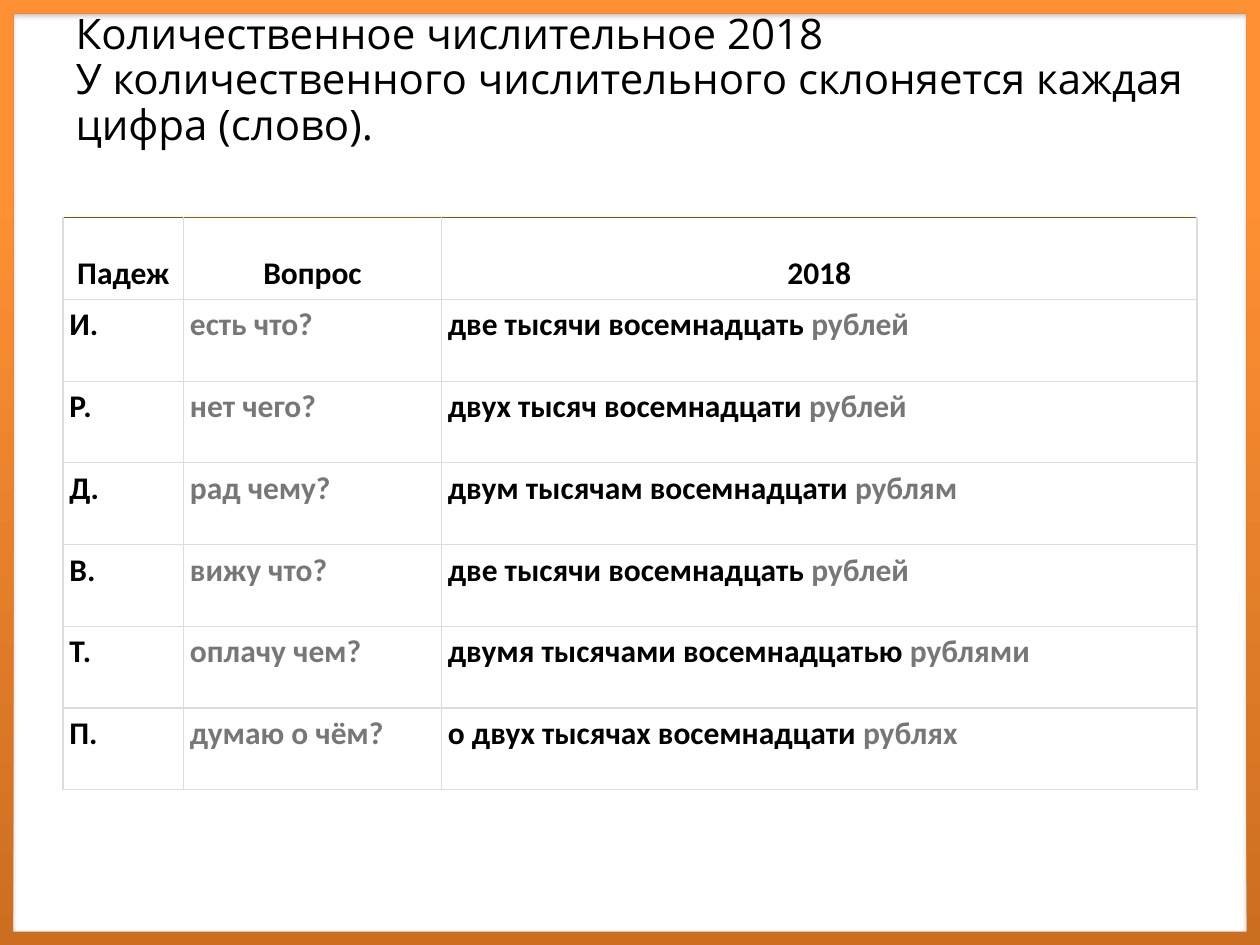
from dataclasses import dataclass

from pptx import Presentation
from pptx.dml.color import RGBColor
from pptx.enum.shapes import MSO_SHAPE as Shape
from pptx.enum.text import MSO_ANCHOR as Anchor, PP_ALIGN as Align
from pptx.oxml import parse_xml
from pptx.oxml.ns import nsdecls
from pptx.util import Cm, Pt


@dataclass(frozen=True)
class Theme:
    title_font: str = "Open Sans"
    body_font: str = "Calibri"
    title_size: int = 24
    body_size: int = 18
    ink: str = "000000"
    muted: str = "777777"
    paper: str = "FFFFFF"
    grid: str = "DDDDDD"
    header_tops: tuple = ("905102", "B05202", "905102")
    frame_stops: tuple = ((0, "CC6E20"), (80, "FF9034"), (100, "FF9136"))


THEME = Theme()
TITLE = ("Количественное числительное 2018",
         "У количественного числительного склоняется каждая цифра (слово).")
HEADERS = ("Падеж", "Вопрос", "2018")
CASES = (
    ("И.", "есть что?", "две тысячи восемнадцать", "рублей"),
    ("Р.", "нет чего?", "двух тысяч восемнадцати", "рублей"),
    ("Д.", "рад чему?", "двум тысячам восемнадцати", "рублям"),
    ("В.", "вижу что?", "две тысячи восемнадцать", "рублей"),
    ("Т.", "оплачу чем?", "двумя тысячами восемнадцатью", "рублями"),
    ("П.", "думаю о чём?", "о двух тысячах восемнадцати", "рублях"),
)
COLUMN_SHARES = (2.43, 5.2, 15.23)


def add_run(p, text, *, font=THEME.body_font, size=THEME.body_size,
            color=THEME.ink, bold=False):
    r = p.add_run()
    r.text = text
    r.font.name, r.font.size, r.font.bold = font, Pt(size), bold
    r.font.color.rgb = RGBColor.from_string(color)


def add_frame(s, x, y, w, h):
    sp = s.shapes.add_shape(Shape.FRAME, x, y, w, h)
    sp.adjustments[0] = 0.014
    sp.line.fill.background()
    sp.shadow.inherit = False
    sp.fill.background()
    props = sp.element.spPr
    stops = "".join(f'<a:gs pos="{pos * 1000}"><a:srgbClr val="{color}"/></a:gs>'
                    for pos, color in THEME.frame_stops)
    gradient = parse_xml(f'<a:gradFill {nsdecls("a")} rotWithShape="1">'
                         f'<a:gsLst>{stops}</a:gsLst>'
                         '<a:lin ang="16200000" scaled="0"/></a:gradFill>')
    props.replace(props.find("{*}noFill"), gradient)
    props.find("{*}effectLst").append(parse_xml(
        f'<a:outerShdw {nsdecls("a")} blurRad="{Pt(3.1)}" dist="{Pt(1.8)}" '
        'dir="5400000" rotWithShape="0"><a:srgbClr val="000000">'
        '<a:alpha val="35000"/></a:srgbClr></a:outerShdw>'))
    s.shapes.title.element.addprevious(sp.element)


def place_title(s, x, y, w, h):
    sp = s.shapes.title
    sp.left, sp.top, sp.width, sp.height = x, y, w, h
    tf = sp.text_frame
    tf.word_wrap = True
    tf.vertical_anchor = Anchor.MIDDLE
    tf.margin_top, tf.margin_bottom = Cm(0.13), Cm(1.15)
    p = tf.paragraphs[0]
    p.alignment, p.line_spacing = Align.LEFT, 0.9
    for i, line in enumerate(TITLE):
        if i:
            p.add_line_break()
        add_run(p, line, font=THEME.title_font, size=THEME.title_size)


def set_borders(cell, top):
    props = cell._tc.get_or_add_tcPr()
    colors = {"lnL": THEME.grid, "lnR": THEME.grid, "lnT": top, "lnB": THEME.grid}
    for i, (tag, color) in enumerate(colors.items()):
        props.insert(i, parse_xml(
            f'<a:{tag} {nsdecls("a")} w="{Pt(0.75)}"><a:solidFill>'
            f'<a:srgbClr val="{color}"/></a:solidFill></a:{tag}>'))


def fill_cell(cell, runs, *, top=THEME.grid, header=False):
    cell.fill.solid()
    cell.fill.fore_color.rgb = RGBColor.from_string(THEME.paper)
    cell.margin_left = cell.margin_right = Cm(0.13)
    cell.margin_top = cell.margin_bottom = Cm(0.13)
    cell.vertical_anchor = Anchor.BOTTOM if header else Anchor.TOP
    p = cell.text_frame.paragraphs[0]
    p.alignment = Align.CENTER if header else Align.LEFT
    for text, color in runs:
        add_run(p, text, color=color, bold=True)
    set_borders(cell, top)


def add_case_table(s, x, y, w, h):
    table = s.shapes.add_table(len(CASES) + 1, len(HEADERS), x, y, w, h).table
    table.first_row = table.horz_banding = False
    for column, share in zip(table.columns, COLUMN_SHARES):
        column.width = int(w * share / sum(COLUMN_SHARES))
    for i, (text, top) in enumerate(zip(HEADERS, THEME.header_tops)):
        fill_cell(table.cell(0, i), [(text, THEME.ink)], top=top, header=True)
    for row, (case, question, numeral, noun) in enumerate(CASES, 1):
        fill_cell(table.cell(row, 0), [(case, THEME.ink)])
        fill_cell(table.cell(row, 1), [(question, THEME.muted)])
        fill_cell(table.cell(row, 2),
                  [(f"{numeral} ", THEME.ink), (noun, THEME.muted)])


def main():
    prs = Presentation()
    prs.slide_width, prs.slide_height = Cm(25.4), Cm(19.05)
    s = prs.slides.add_slide(prs.slide_layouts[5])
    s.background.fill.solid()
    s.background.fill.fore_color.rgb = RGBColor.from_string(THEME.paper)
    add_frame(s, 0, 0, prs.slide_width, prs.slide_height)
    place_title(s, Cm(1.27), Cm(0.76), Cm(22.86), Cm(2.77))
    add_case_table(s, Cm(1.27), Cm(4.39), Cm(22.86), Cm(11.53))
    prs.save("out.pptx")


if __name__ == "__main__":
    main()
